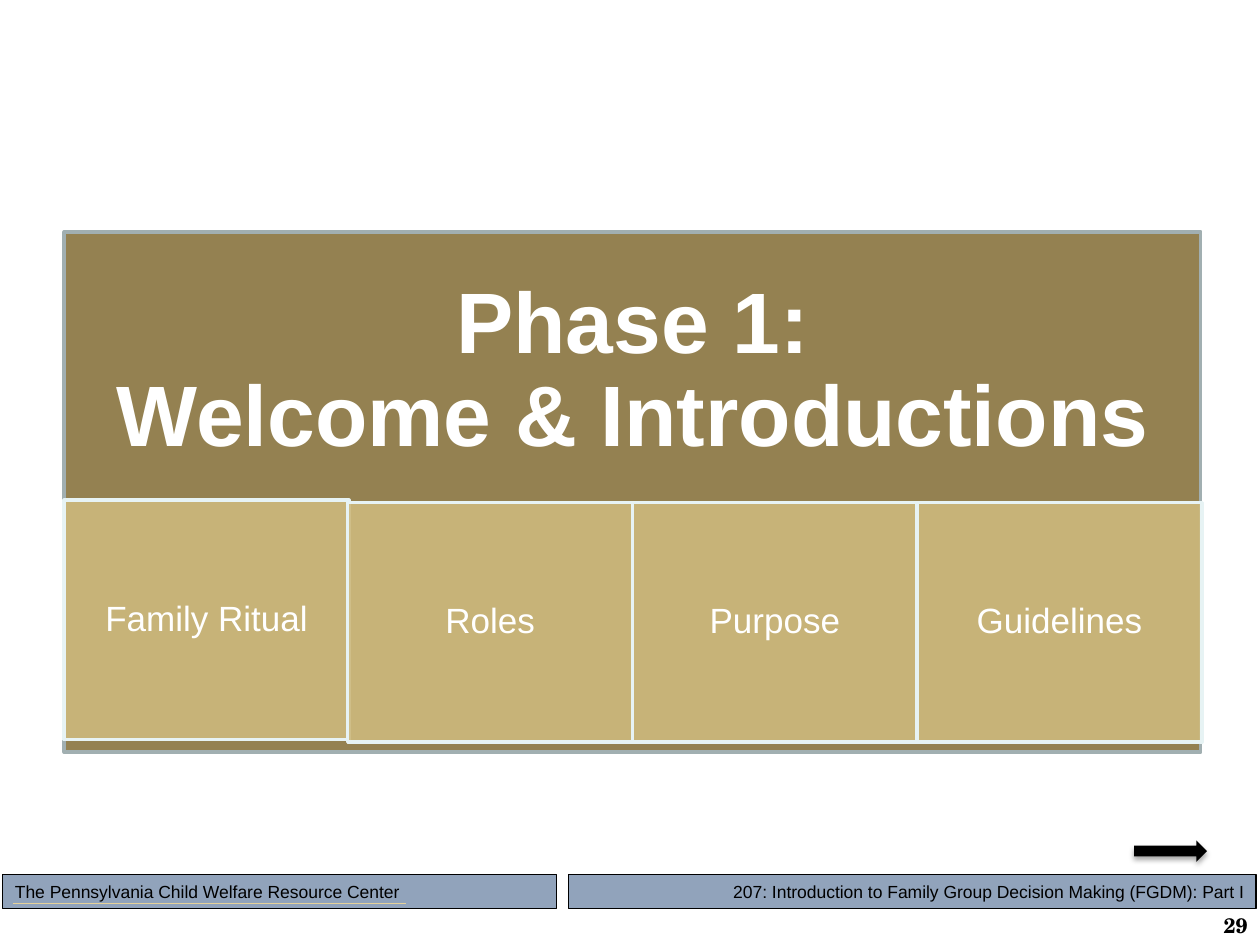
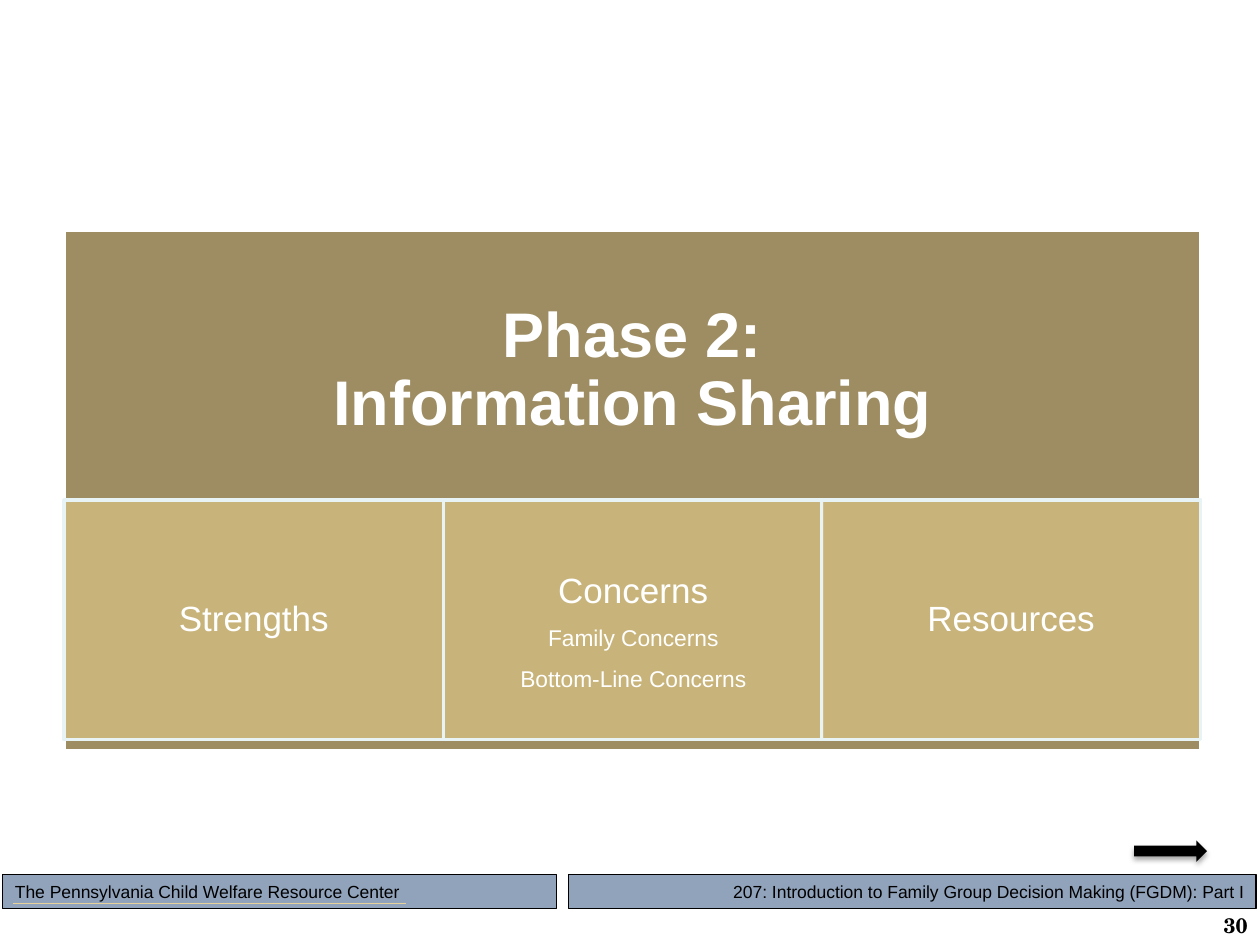
from lxml.etree import SubElement
from pptx import Presentation
from pptx.dml.color import RGBColor
from pptx.enum.shapes import MSO_CONNECTOR, MSO_SHAPE
from pptx.enum.text import MSO_ANCHOR, PP_ALIGN
from pptx.oxml.ns import qn
from pptx.util import Pt

PX = 9144  # 100 px to the inch
HEX = {
    "bar": "91A3BB", "rule": "E5D199", "panel": "948151", "edge": "A1AFB1",
    "cell": "CDB97D", "frame": "E7F3F4", "white": "FFFFFF", "black": "000000",
}
RGB = {name: RGBColor.from_string(code) for name, code in HEX.items()}
LEFT, WIDE, HIGH = 51, 902, 413
TITLE_HIGH, CELL_HIGH = 223, 190

BARS = [
    (451, 546, 0.75, PP_ALIGN.RIGHT,
     "207: Introduction to Family Group Decision Making (FGDM): Part I"),
    (2, 440, 0.5, PP_ALIGN.LEFT, "The Pennsylvania Child Welfare Resource Center"),
]
PHASES = [
    {"title": "Phase 1:\vWelcome & Introductions", "size": 49, "inset": 38,
     "top": 184, "edge": "edge", "alpha": 100,
     "cells": [(397, ["Family Ritual"]), (399, ["Roles"]),
               (399, ["Purpose"]), (399, ["Guidelines"])]},
    {"title": "Phase 2:\vInformation Sharing", "size": 36, "inset": 28,
     "top": 183, "edge": "white", "alpha": 90,
     "cells": [(397, ["Strengths"]),
               (397, ["Concerns", "Family Concerns", "Bottom-Line Concerns"]),
               (397, ["Resources"])]},
]


def box(slide, kind, x, y, w, h, fill, line=None, width=0, alpha=100):
    """Add a filled shape; alpha is the opacity of its fill in percent."""
    shape = slide.shapes.add_shape(kind, x * PX, y * PX, w * PX, h * PX)
    shape.shadow.inherit = False
    shape.fill.solid()
    shape.fill.fore_color.rgb = RGB[fill]
    if line:
        shape.line.color.rgb = RGB[line]
        shape.line.width = Pt(width)
    else:
        shape.line.fill.background()
    if alpha < 100:
        color = shape._element.spPr.find(qn("a:solidFill"))[0]
        SubElement(color, qn("a:alpha"), val=str(alpha * 1000))
    return shape


def write(shape, lines, sizes, align, color, space=None, insets=None,
          font="Arial", bold=False):
    """Fill a shape with one paragraph a line, sized in step with sizes."""
    frame = shape.text_frame
    frame.word_wrap = True
    frame.vertical_anchor = MSO_ANCHOR.MIDDLE
    if insets:
        side, top, low = insets
        frame.margin_left = frame.margin_right = side * PX
        frame.margin_top, frame.margin_bottom = top * PX, low * PX
    frame.text = "\n".join(lines)
    for para, size in zip(frame.paragraphs, sizes):
        para.alignment = align
        para.line_spacing = space
        for run in para.runs:
            run.font.name = font
            run.font.size = Pt(size)
            run.font.bold = bold
            run.font.color.rgb = RGB[color]


deck = Presentation()
deck.slide_width, deck.slide_height = 1000 * PX, 750 * PX

for number, phase in enumerate(PHASES, start=29):
    slide = deck.slides.add_slide(deck.slide_layouts[6])

    # Footer bars, rule and page number
    for x, w, width, align, text in BARS:
        bar = box(slide, MSO_SHAPE.RECTANGLE, x, 694, w, 27, "bar", "black", width)
        write(bar, [text], [10], align, "black")
    rule = slide.shapes.add_connector(
        MSO_CONNECTOR.STRAIGHT, 10 * PX, 717 * PX, 322 * PX, 717 * PX)
    rule.line.color.rgb = RGB["rule"]
    rule.line.width = Pt(0.75)
    SubElement(rule._element.spPr, qn("a:effectLst"))
    page = slide.shapes.add_textbox(889 * PX, 724 * PX, 111 * PX, 21 * PX)
    write(page, [str(number)], [12], PP_ALIGN.RIGHT, "black",
          font="TeX Gyre Schola", bold=True)

    # Phase panel, its title centred in the part above the cells
    panel = box(slide, MSO_SHAPE.RECTANGLE, LEFT, phase["top"], WIDE, HIGH,
                "panel", phase["edge"], 2, phase["alpha"])
    inset = phase["inset"]
    write(panel, [phase["title"]], [phase["size"]], PP_ALIGN.CENTER, "white",
          0.9, (inset, inset, HIGH - TITLE_HIGH + inset), bold=True)

    # Row of equal cells
    step = WIDE / len(phase["cells"])
    for i, (top, lines) in enumerate(phase["cells"]):
        cell = box(slide, MSO_SHAPE.RECTANGLE, round(LEFT + i * step), top,
                   round(step), CELL_HIGH, "cell", "frame", 2, 90)
        write(cell, lines, [20, 13, 13], PP_ALIGN.CENTER, "white",
              1.5 if len(lines) > 1 else 0.9, (16, 3, 3))

    # Arrow with a soft shadow below
    arrow = box(slide, MSO_SHAPE.RIGHT_ARROW, 900, 667, 58, 17, "black")
    glow = SubElement(arrow._element.spPr.find(qn("a:effectLst")), qn("a:outerShdw"),
                      blurRad=str(Pt(3.1)), dist=str(Pt(1.8)), dir="5400000",
                      rotWithShape="0")
    tint = SubElement(glow, qn("a:srgbClr"), val=HEX["black"])
    SubElement(tint, qn("a:alpha"), val="35000")

deck.save("out.pptx")
